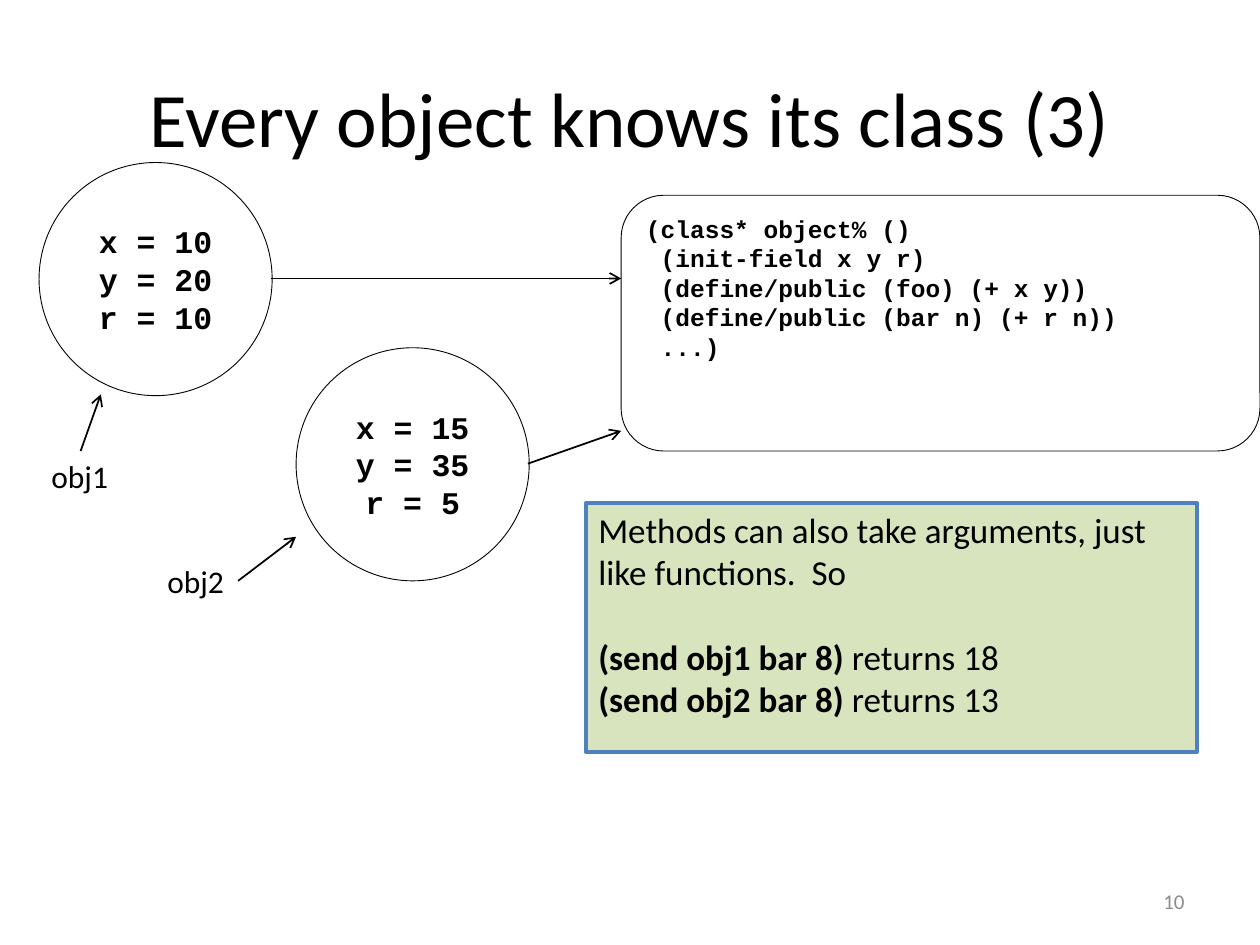
import dataclasses

import pptx
import pptx.dml.color
import pptx.enum.shapes
import pptx.enum.text
import pptx.oxml
import pptx.oxml.ns
import pptx.util

Shape = pptx.enum.shapes.MSO_SHAPE
Align = pptx.enum.text.PP_ALIGN
Anchor = pptx.enum.text.MSO_ANCHOR
Pt = pptx.util.Pt


def rgb(value):
    return pptx.dml.color.RGBColor.from_string(value)


@dataclasses.dataclass(frozen=True)
class Theme:
    ink: str = "000000"
    muted: str = "8C8C8C"
    note_fill: str = "D7E4BD"
    note_line: str = "4F81BD"
    body_font: str = "Calibri"
    code_font: str = "Courier New"
    title_size: int = 44
    note_size: int = 20
    text_size: int = 18
    code_size: int = 14
    number_size: int = 12
    outline: float = 0.5
    arrow: float = 1
    note_border: float = 2


class ObjectDiagram:
    columns, rows = 100, 75

    def __init__(self, deck, theme):
        self.theme = theme
        self.cell_width = deck.slide_width / self.columns
        self.cell_height = deck.slide_height / self.rows
        self.slide = deck.slides.add_slide(deck.slide_layouts[6])

    def grid(self, *cells):
        steps = (self.cell_width, self.cell_height)
        return [round(cell * steps[i % 2]) for i, cell in enumerate(cells)]

    def set_lines(self, holder, lines, size, font=None, color=None, bold=False,
                  align=Align.LEFT, anchor=Anchor.TOP, wrap=True):
        frame = holder.text_frame
        frame.word_wrap = wrap
        frame.vertical_anchor = anchor
        for i, line in enumerate(lines):
            paragraph = frame.add_paragraph() if i else frame.paragraphs[0]
            paragraph.alignment = align
            paragraph.font.size = Pt(size)
            paragraph.font.name = font or self.theme.body_font
            paragraph.font.color.rgb = rgb(color or self.theme.ink)
            paragraph.font.bold = bold
            paragraph.add_run().text = line
        return frame

    def text(self, cells, line, size, **style):
        box = self.slide.shapes.add_textbox(*self.grid(*cells))
        return self.set_lines(box, [line], size, **style)

    def label(self, left, top, name):
        frame = self.text((left, top, 6.6, 4), name, self.theme.text_size, wrap=False)
        frame.auto_size = pptx.enum.text.MSO_AUTO_SIZE.SHAPE_TO_FIT_TEXT

    def shape(self, kind, cells, line, width, fill=None):
        shape = self.slide.shapes.add_shape(kind, *self.grid(*cells))
        shape.shadow.inherit = False
        if fill:
            shape.fill.solid()
            shape.fill.fore_color.rgb = rgb(fill)
        else:
            shape.fill.background()
        shape.line.color.rgb = rgb(line)
        shape.line.width = Pt(width)
        return shape

    def instance(self, left, top, fields):
        circle = self.shape(Shape.OVAL, (left, top, 18.5, 18.5),
                            self.theme.ink, self.theme.outline)
        self.set_lines(circle, fields, self.theme.text_size, font=self.theme.code_font,
                       bold=True, align=Align.CENTER, anchor=Anchor.MIDDLE)

    def class_definition(self, cells, code):
        card = self.shape(Shape.ROUNDED_RECTANGLE, cells,
                          self.theme.ink, self.theme.outline)
        self.set_lines(card, code, self.theme.code_size,
                       font=self.theme.code_font, bold=True)

    def note(self, cells, statement, examples):
        panel = self.shape(Shape.RECTANGLE, cells, self.theme.note_line,
                           self.theme.note_border, self.theme.note_fill)
        calls = [call + " " for call, _ in examples]
        frame = self.set_lines(panel, [statement, *calls], self.theme.note_size)
        sends = frame.paragraphs[1:]
        sends[0].space_before = Pt(self.theme.note_size * 1.2)
        for paragraph, (_, outcome) in zip(sends, examples):
            paragraph.runs[0].font.bold = True
            paragraph.add_run().text = outcome

    def arrow(self, *ends):
        link = self.slide.shapes.add_connector(
            pptx.enum.shapes.MSO_CONNECTOR.STRAIGHT, *self.grid(*ends))
        link.line.color.rgb = rgb(self.theme.ink)
        link.line.width = Pt(self.theme.arrow)
        properties = link._element.spPr
        namespace = pptx.oxml.ns.nsdecls("a")
        properties.get_or_add_ln().append(
            pptx.oxml.parse_xml(f'<a:tailEnd {namespace} type="arrow"/>'))
        properties.append(pptx.oxml.parse_xml(f"<a:effectLst {namespace}/>"))


def main():
    deck = pptx.Presentation()
    deck.slide_width = pptx.util.Inches(10)
    deck.slide_height = pptx.util.Inches(7.5)
    theme = Theme()
    diagram = ObjectDiagram(deck, theme)

    diagram.text((5, 3, 90, 12.5), "Every object knows its class (3)",
                 theme.title_size, align=Align.CENTER, anchor=Anchor.MIDDLE)
    diagram.text((71.7, 69.5, 23.3, 4), "10", theme.number_size,
                 color=theme.muted, align=Align.RIGHT, anchor=Anchor.MIDDLE)

    diagram.instance(3.1, 12.9, ["x = 10", "y = 20", "r = 10"])
    diagram.instance(23.5, 27.6, ["x = 15", "y = 35", "r = 5"])
    diagram.class_definition((49.3, 15.5, 50.7, 20.3), [
        "(class* object% ()",
        " (init-field x y r)",
        " (define/public (foo) (+ x y))",
        " (define/public (bar n) (+ r n))",
        " ...)",
    ])

    diagram.label(3.1, 35.8, "obj1")
    diagram.label(12.3, 44.1, "obj2")
    for ends in [(21.5, 22.1, 49.3, 22.1), (41.9, 36.8, 49.3, 34.2),
                 (6.4, 35.8, 8, 31.3), (18.9, 46.1, 23.5, 42.6)]:
        diagram.arrow(*ends)

    diagram.note((46.5, 39.9, 48.5, 19.8),
                 "Methods can also take arguments, just like functions.  So",
                 [("(send obj1 bar 8)", "returns 18"),
                  ("(send obj2 bar 8)", "returns 13")])

    deck.save("out.pptx")


if __name__ == "__main__":
    main()
